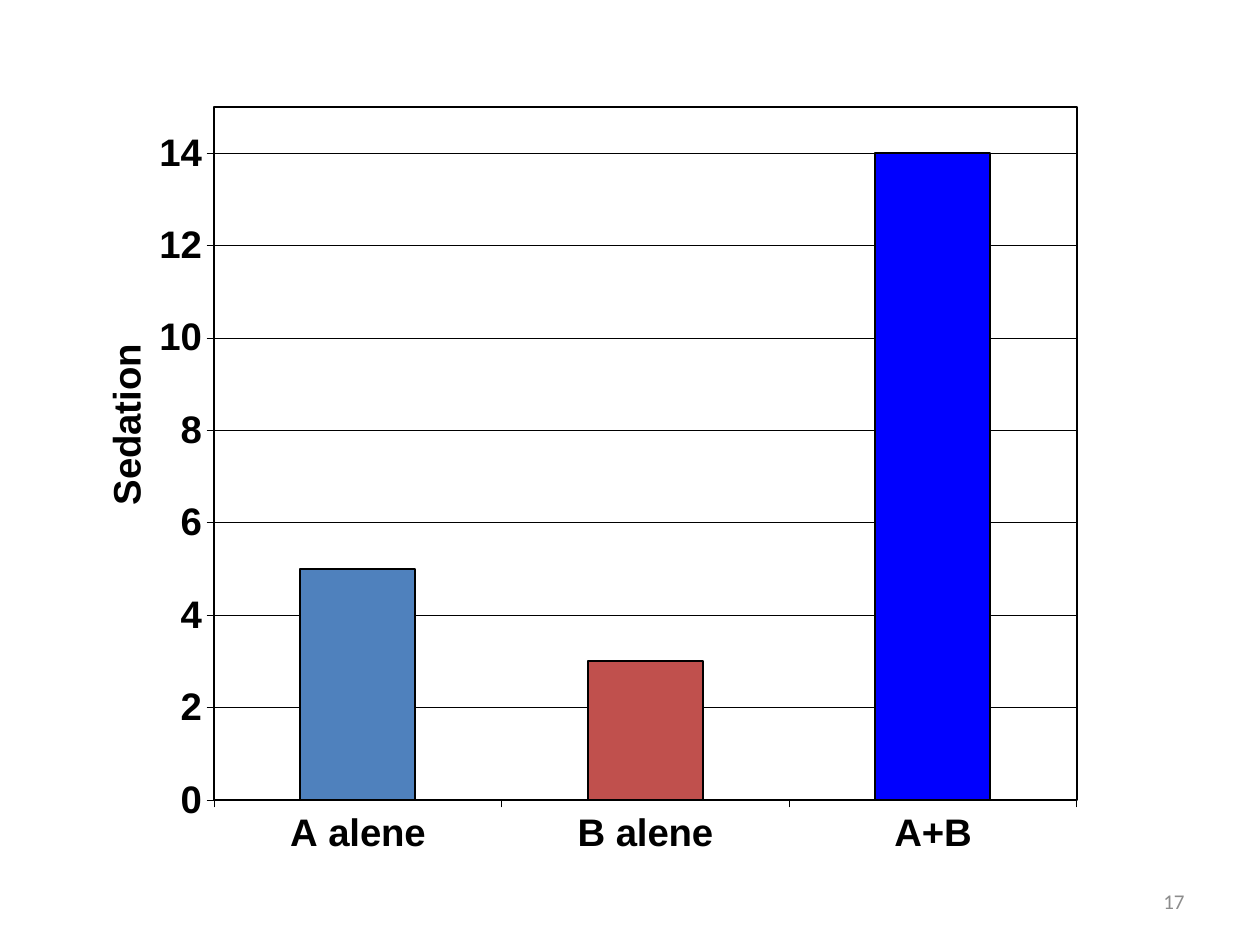
import pptx
import pptx.chart.data
import pptx.dml.color
import pptx.enum.chart
import pptx.enum.text
import pptx.oxml
import pptx.oxml.ns
import pptx.util
from pptx.util import Inches

CATEGORIES = ["A alene", "B alene", "A+B"]
SERIES = [
    ("Series 1", (5, 0, 0), "4F81BD"),
    ("Series 2", (0, 3, 0), "C0504D"),
    ("Series 3", (None, None, 14), "0000FF"),
]
CHART_FONT = {"name": "Arial", "size": pptx.util.Pt(21.9), "bold": True}
NUMBER_FONT = {"name": "Calibri", "size": pptx.util.Pt(12)}
VALUE_SCALE = {"minimum_scale": 0, "maximum_scale": 15, "major_unit": 2}


def color(value):
    return pptx.dml.color.RGBColor.from_string(value)


def apply_format(target, values):
    for name, value in values.items():
        setattr(target, name, value)


def format_font(font, values, font_color):
    apply_format(font, values)
    font.color.rgb = color(font_color)


def format_line(line, width):
    line.color.rgb = color("000000")
    line.width = pptx.util.Pt(width)


def set_layout(parent, position, **fractions):
    """Place a chart part by fractions of the chart area."""
    for old_layout in parent.findall(pptx.oxml.ns.qn("c:layout")):
        parent.remove(old_layout)
    target = '<c:layoutTarget val="inner"/>' if "w" in fractions else ""
    modes = "".join(f'<c:{key}Mode val="edge"/>' for key in "xy")
    values = "".join(f'<c:{key} val="{value}"/>' for key, value in fractions.items())
    parent.insert(position, pptx.oxml.parse_xml(
        f'<c:layout {pptx.oxml.ns.nsdecls("c")}><c:manualLayout>'
        f'{target}{modes}{values}</c:manualLayout></c:layout>'))


def add_plot_border(plot_area, width):
    plot_area.append(pptx.oxml.parse_xml(
        f'<c:spPr {pptx.oxml.ns.nsdecls("c", "a")}><a:noFill/>'
        f'<a:ln w="{pptx.util.Pt(width)}"><a:solidFill><a:srgbClr val="000000"/>'
        '</a:solidFill></a:ln></c:spPr>'))


def format_axis(axis):
    axis.major_tick_mark = pptx.enum.chart.XL_TICK_MARK.OUTSIDE
    axis.minor_tick_mark = pptx.enum.chart.XL_TICK_MARK.NONE
    format_font(axis.tick_labels.font, CHART_FONT, "000000")
    format_line(axis.format.line, 0.3)


def add_axis_title(axis, text):
    title = axis.axis_title
    paragraph = title.text_frame.paragraphs[0]
    run = paragraph.add_run()
    run.text = text
    format_font(run.font, CHART_FONT, "000000")
    element = title.format.element if hasattr(title.format, "element") else title._element
    body = next(element.iter(pptx.oxml.ns.qn("a:bodyPr")))
    body.set("rot", "-5400000")
    body.set("vert", "horz")
    set_layout(element, 1, x=0.03, y=0.33)


def add_sedation_chart(slide):
    data = pptx.chart.data.CategoryChartData()
    data.categories = CATEGORIES
    for name, values, _ in SERIES:
        data.add_series(name, values)
    chart = slide.shapes.add_chart(
        pptx.enum.chart.XL_CHART_TYPE.COLUMN_STACKED,
        Inches(0.51), Inches(0.29), Inches(8.15), Inches(7.24), data).chart
    chart.has_legend = False
    chart.has_title = False
    format_font(chart.font, CHART_FONT, "000000")

    # Columns
    plot = chart.plots[0]
    apply_format(plot, {"gap_width": 150, "overlap": 100, "vary_by_categories": False})
    for series, (_, _, fill_color) in zip(plot.series, SERIES):
        series.format.fill.solid()
        series.format.fill.fore_color.rgb = color(fill_color)
        format_line(series.format.line, 1.22)

    # Axes and gridlines
    format_axis(chart.category_axis)
    value_axis = chart.value_axis
    format_axis(value_axis)
    apply_format(value_axis, VALUE_SCALE)
    value_axis.has_major_gridlines = True
    format_line(value_axis.major_gridlines.format.line, 0.3)
    add_axis_title(value_axis, "Sedation")

    # Plot frame
    plot_area = chart.element.find(".//" + pptx.oxml.ns.qn("c:plotArea"))
    set_layout(plot_area, 0, x=0.146, y=0.077, w=0.84, h=0.76)
    add_plot_border(plot_area, 1.22)


def add_slide_number(slide, text):
    box = slide.shapes.add_textbox(Inches(7.17), Inches(6.95), Inches(2.33), Inches(0.4))
    frame = box.text_frame
    apply_format(frame, {
        "word_wrap": True, "vertical_anchor": pptx.enum.text.MSO_ANCHOR.MIDDLE})
    paragraph = frame.paragraphs[0]
    paragraph.alignment = pptx.enum.text.PP_ALIGN.RIGHT
    run = paragraph.add_run()
    run.text = text
    format_font(run.font, NUMBER_FONT, "8C8C8C")


def main():
    presentation = pptx.Presentation()
    presentation.slide_width = Inches(10)
    presentation.slide_height = Inches(7.5)
    slide = presentation.slides.add_slide(presentation.slide_layouts[6])
    add_slide_number(slide, "17")
    add_sedation_chart(slide)
    presentation.save("out.pptx")


if __name__ == "__main__":
    main()
